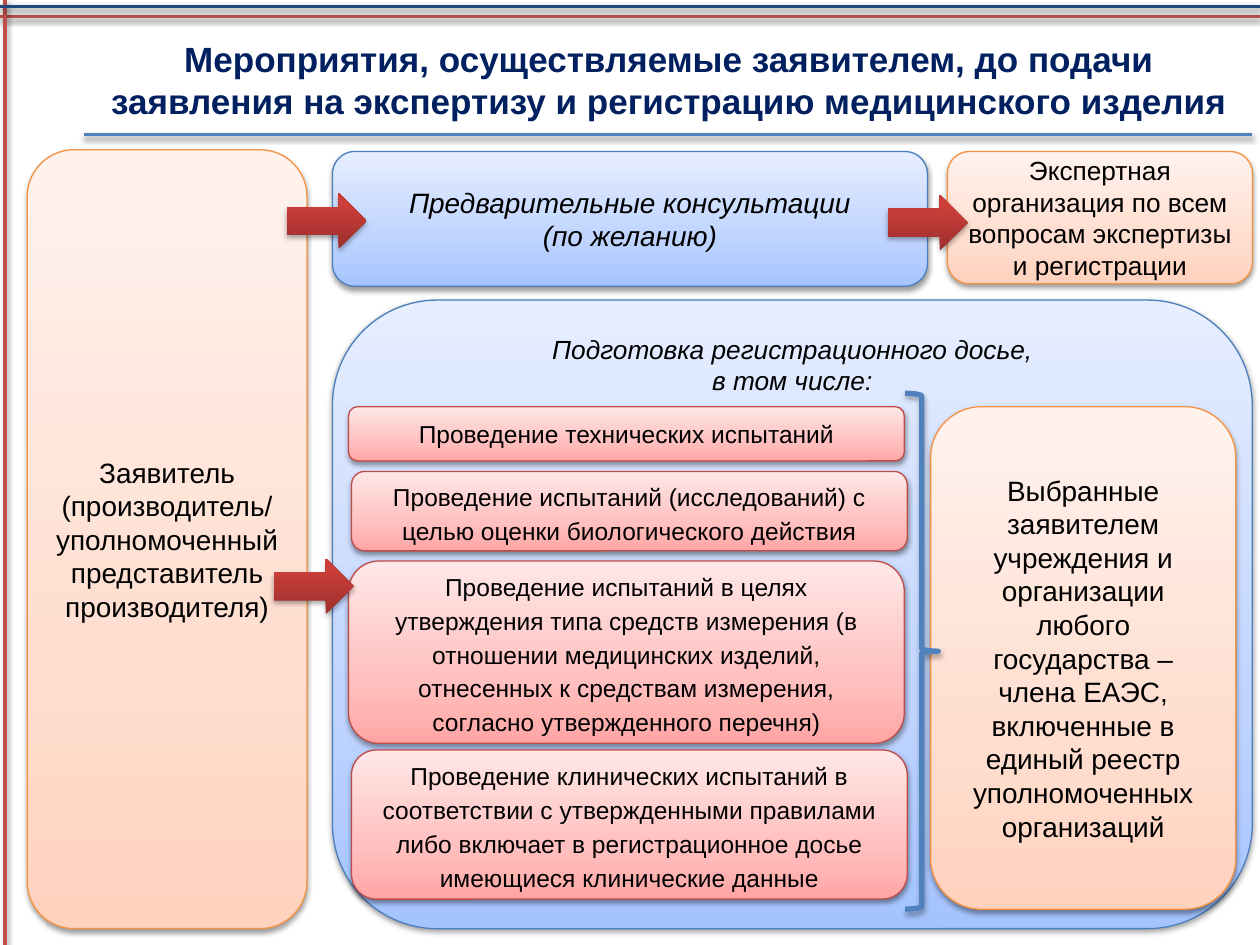
from lxml.etree import SubElement as Sub
from pptx import Presentation
from pptx.dml.color import RGBColor as RGB
from pptx.enum.shapes import MSO_CONNECTOR as Link, MSO_SHAPE as Kind
from pptx.enum.text import MSO_ANCHOR as Anchor, MSO_AUTO_SIZE as Fit, PP_ALIGN as Align
from pptx.oxml.ns import qn
from pptx.util import Pt

FONT = "Arial"
BLACK = RGB(0, 0, 0)
NAVY = RGB(0x00, 0x20, 0x60)
BLUE = RGB(0x4F, 0x81, 0xBD)
DEEP = RGB(0x1F, 0x49, 0x7D)
RED = RGB(0xC0, 0x50, 0x4D)

# Each style: line colour, then gradient stops (percent, colour) from bottom to top
PEACH = (RGB(0xF6, 0x92, 0x40), [(0, RGB(0xFF, 0xD2, 0xBD)),
         (35, RGB(0xFF, 0xDE, 0xD0)), (100, RGB(0xFF, 0xF2, 0xED))])
SKY = (RGB(0x4B, 0x7E, 0xBC), [(0, RGB(0xA4, 0xC4, 0xFF)),
       (35, RGB(0xBF, 0xD4, 0xFF)), (100, RGB(0xE6, 0xEE, 0xFF))])
ROSE = (RGB(0xBF, 0x4C, 0x48), [(0, RGB(0xFF, 0xA6, 0xA5)),
        (35, RGB(0xFF, 0xC0, 0xBF)), (100, RGB(0xFF, 0xE7, 0xE7))])
BRICK = (None, [(0, RGB(0x9C, 0x2F, 0x2D)),
         (80, RGB(0xCB, 0x3E, 0x3A)), (100, RGB(0xCE, 0x3B, 0x37))])

TESTS = [  # left, top, height, line spacing, text
    (199.2, 232.4, 31, 1, "Проведение технических испытаний"),
    (200.9, 269.4, 45.4, 1.15, "Проведение испытаний (исследований) с целью "
     "оценки биологического действия"),
    (199.2, 320.6, 104.2, 1.15, "Проведение испытаний в целях утверждения типа "
     "средств измерения (в отношении медицинских изделий, отнесенных к "
     "средствам измерения, согласно утвержденного перечня)"),
    (200.9, 428.6, 85.2, 1.15, "Проведение клинических испытаний в соответствии "
     "с утвержденными правилами либо включает в регистрационное досье "
     "имеющиеся клинические данные"),
]


def tint(node, color, alpha=None):
    clr = Sub(node, qn("a:srgbClr"), val=str(color))
    if alpha:
        Sub(clr, qn("a:alpha"), val=str(alpha * 1000))


def shade(shape, alpha=38, dist=1.6):
    """Give a shape or connector a soft shadow straight below it."""
    props = shape._element.spPr
    effect = props.find(qn("a:effectLst"))
    if effect is None:
        effect = Sub(props, qn("a:effectLst"))
    drop = Sub(effect, qn("a:outerShdw"), blurRad=str(Pt(3.1)),
               dist=str(Pt(dist)), dir="5400000", rotWithShape="0")
    tint(drop, BLACK, alpha)


def blend(shape, stops):
    """Fill a shape with a gradient that runs from bottom to top."""
    shape.fill.gradient()
    grad = shape._element.spPr.find(qn("a:gradFill"))
    for child in list(grad):
        grad.remove(child)
    group = Sub(grad, qn("a:gsLst"))
    for spot, color in stops:
        tint(Sub(group, qn("a:gs"), pos=str(spot * 1000)), color)
    Sub(grad, qn("a:lin"), ang="16200000", scaled="0")


def write(shape, text, size=16, color=BLACK, bold=False, italic=False,
          gap=1, anchor=Anchor.MIDDLE, top=3.6):
    frame = shape.text_frame
    frame.word_wrap = True
    frame.auto_size = Fit.NONE
    frame.vertical_anchor = anchor
    frame.margin_top = Pt(top)
    frame.text = text
    for para in frame.paragraphs:
        para.alignment = Align.CENTER
        para.line_spacing = gap
        font = para.font
        font.name, font.size = FONT, Pt(size)
        font.bold, font.italic = bold, italic
        font.color.rgb = color


def add_line(slide, x1, y1, x2, y2, color):
    line = slide.shapes.add_connector(Link.STRAIGHT, Pt(x1), Pt(y1), Pt(x2), Pt(y2))
    line.line.color.rgb = color
    line.line.width = Pt(2)
    shade(line)


def add_form(slide, kind, x, y, w, h):
    form = slide.shapes.add_shape(kind, Pt(x), Pt(y), Pt(w), Pt(h))
    form.shadow.inherit = False
    return form


def add_card(slide, x, y, w, h, style, text, **style_args):
    edge, stops = style
    card = add_form(slide, Kind.ROUNDED_RECTANGLE, x, y, w, h)
    blend(card, stops)
    card.line.color.rgb = edge
    card.line.width = Pt(0.75)
    shade(card)
    write(card, text, **style_args)


def add_arrow(slide, x, y):
    arrow = add_form(slide, Kind.RIGHT_ARROW, x, y, 45.4, 31.7)
    blend(arrow, BRICK[1])
    arrow.line.fill.background()
    shade(arrow, 35, 1.8)


def add_brace(slide, x, y, w, h):
    brace = add_form(slide, Kind.RIGHT_BRACE, x, y, w, h)
    brace.fill.background()
    brace.line.color.rgb = BLUE
    brace.line.width = Pt(3)
    shade(brace, 35, 1.8)


def add_title(slide, text):
    title = slide.shapes.title
    title.left, title.top = Pt(44.6), Pt(11.5)
    title.width, title.height = Pt(675.4), Pt(67.7)
    write(title, text, size=20, color=NAVY, bold=True)


def main():
    deck = Presentation()
    deck.slide_width, deck.slide_height = Pt(720), Pt(540)
    slide = deck.slides.add_slide(deck.slide_layouts[5])

    add_line(slide, 720, 9.4, 0, 9.4, RED)
    add_line(slide, 2.9, 0, 2.9, 540, RED)
    add_line(slide, 0, 3.6, 720, 3.6, DEEP)
    add_title(slide, "Мероприятия, осуществляемые заявителем, до подачи "
              "заявления на экспертизу и регистрацию медицинского изделия")
    add_line(slide, 48, 77, 715.7, 77, BLUE)

    add_card(slide, 15.6, 85.6, 159.8, 445, PEACH, "Заявитель (производитель/\n"
             "уполномоченный представитель производителя)")
    add_card(slide, 190, 86.6, 340, 77, SKY,
             "Предварительные консультации\v(по желанию)", italic=True)
    add_card(slide, 190, 171.5, 525.6, 359.2, SKY,
             "Подготовка регистрационного досье,\nв том числе:",
             size=15, italic=True, anchor=Anchor.TOP, top=1.4)
    for x, y, h, gap, text in TESTS:
        add_card(slide, x, y, 317.6, h, ROSE, text, size=14, gap=gap)
    add_card(slide, 541.4, 86.6, 174.4, 75.6, PEACH, "Экспертная организация "
             "по всем вопросам экспертизы и регистрации", size=15)
    add_card(slide, 531.8, 232.4, 174.4, 287.2, PEACH, "Выбранные заявителем "
             "учреждения и организации любого государства –члена ЕАЭС, "
             "включенные в единый реестр уполномоченных организаций")

    for x, y in [(164, 110.4), (156.7, 319.2), (507.6, 111.4)]:
        add_arrow(slide, x, y)
    add_brace(slide, 517.2, 224.8, 19, 294.7)
    deck.save("out.pptx")


if __name__ == "__main__":
    main()
